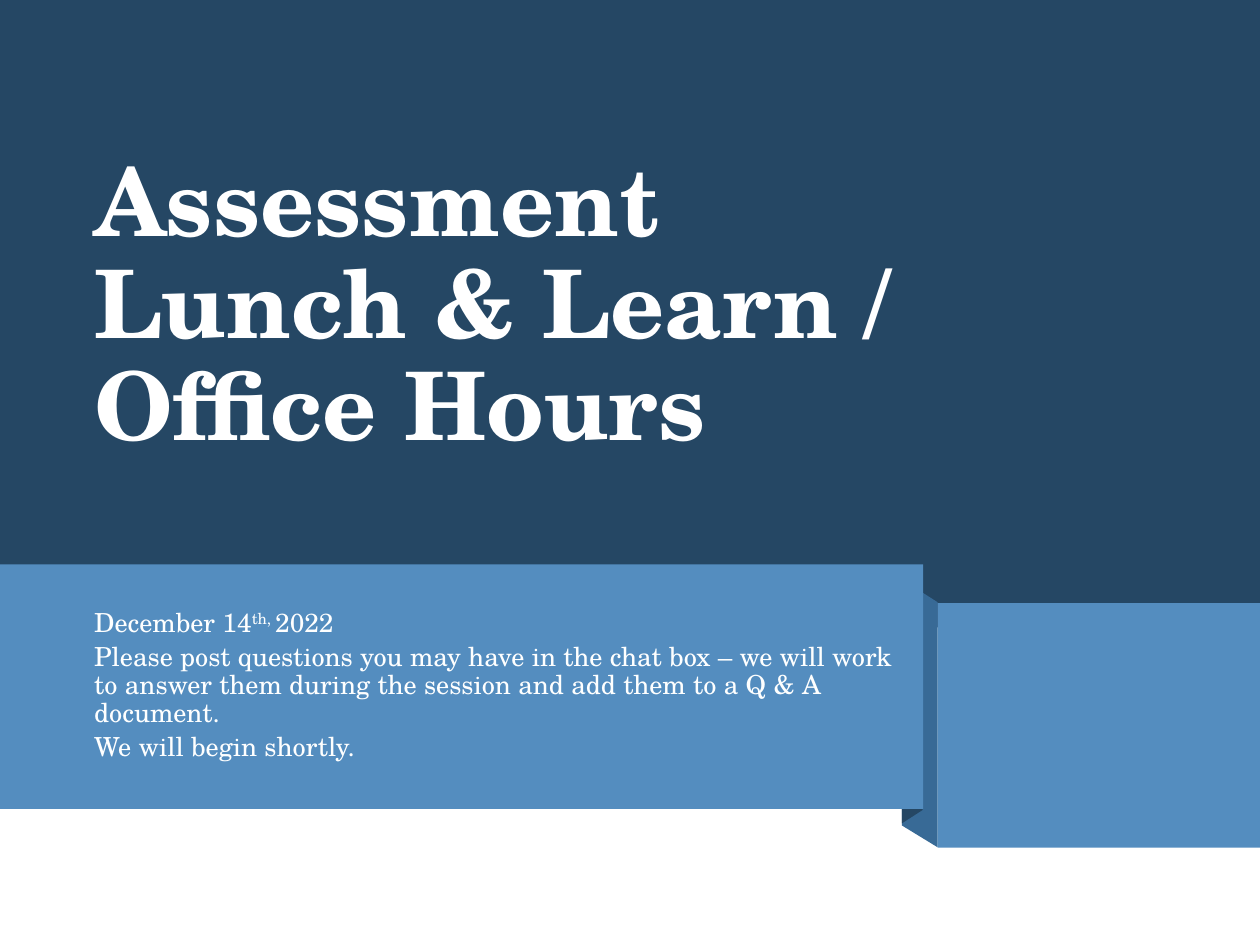
"""Build the title slide with a folded ribbon banner."""
from pptx import Presentation
from pptx.dml.color import RGBColor
from pptx.enum.shapes import MSO_SHAPE
from pptx.enum.text import MSO_ANCHOR
from pptx.util import Cm, Pt

COLORS = {"navy": "254764", "fold": "386A96", "ribbon": "548DBF", "title": "FFFFFF", "subtitle": "FEFFFF"}
FONT = "TeX Gyre Schola"

deck = Presentation()
deck.slide_width, deck.slide_height = Cm(25.4), Cm(19.05)
page = deck.slides.add_slide(deck.slide_layouts[6])


def paint(shape, color):
    shape.shadow.inherit = False
    shape.fill.solid()
    shape.fill.fore_color.rgb = RGBColor.from_string(COLORS[color])
    shape.line.fill.background()


def style_text(box, size, color, bold):
    box.text_frame.word_wrap = True
    for para in box.text_frame.paragraphs:
        para.line_spacing = 0.9
        for span in para.runs:
            span.font.name = FONT
            span.font.size = Pt(size)
            span.font.bold = bold
            span.font.color.rgb = RGBColor.from_string(COLORS[color])


folds = [
    ("fold", [(18.9, 17.08), (18.18, 16.64), (18.18, 11.68), (18.9, 12.14)]),
    ("navy", [(18.6, 16.33), (18.18, 16.6), (18.18, 11.64), (18.6, 11.38)]),
]
bands = [
    ("navy", 0, 0, 25.4, 12.65),
    ("ribbon", 0, 11.38, 18.61, 4.93),
    ("ribbon", 18.9, 12.16, 6.5, 4.93),
]

for index, (color, left, top, width, height) in enumerate(bands):
    band = page.shapes.add_shape(MSO_SHAPE.RECTANGLE, Cm(left), Cm(top), Cm(width), Cm(height))
    paint(band, color)
    if index == 0:
        for fold_color, points in folds:
            corners = [(Cm(x), Cm(y)) for x, y in points]
            builder = page.shapes.build_freeform(*corners[0])
            builder.add_line_segments(corners[1:], close=True)
            paint(builder.convert_to_shape(), fold_color)

title = page.shapes.add_textbox(Cm(1.65), Cm(1.78), Cm(17.25), Cm(8.86))
title.text_frame.text = "Assessment \vLunch & Learn / \vOffice Hours"
title.text_frame.vertical_anchor = MSO_ANCHOR.MIDDLE
style_text(title, 54, "title", True)

subtitle = page.shapes.add_textbox(Cm(1.65), Cm(12.17), Cm(16.61), Cm(3.56))
date = subtitle.text_frame.paragraphs[0]
for text, baseline in [("December 14", 0), ("th, ", 30000), ("2022", 0)]:
    span = date.add_run()
    span.text = text
    if baseline:
        span.font._element.set("baseline", str(baseline))
for text in [
    "Please post questions you may have in the chat box – we will work to answer them "
    "during the session and add them to a Q & A document.",
    "We will begin shortly.",
]:
    para = subtitle.text_frame.add_paragraph()
    para.text = text
    para.space_before = Pt(3)
style_text(subtitle, 15, "subtitle", False)

deck.save("out.pptx")
